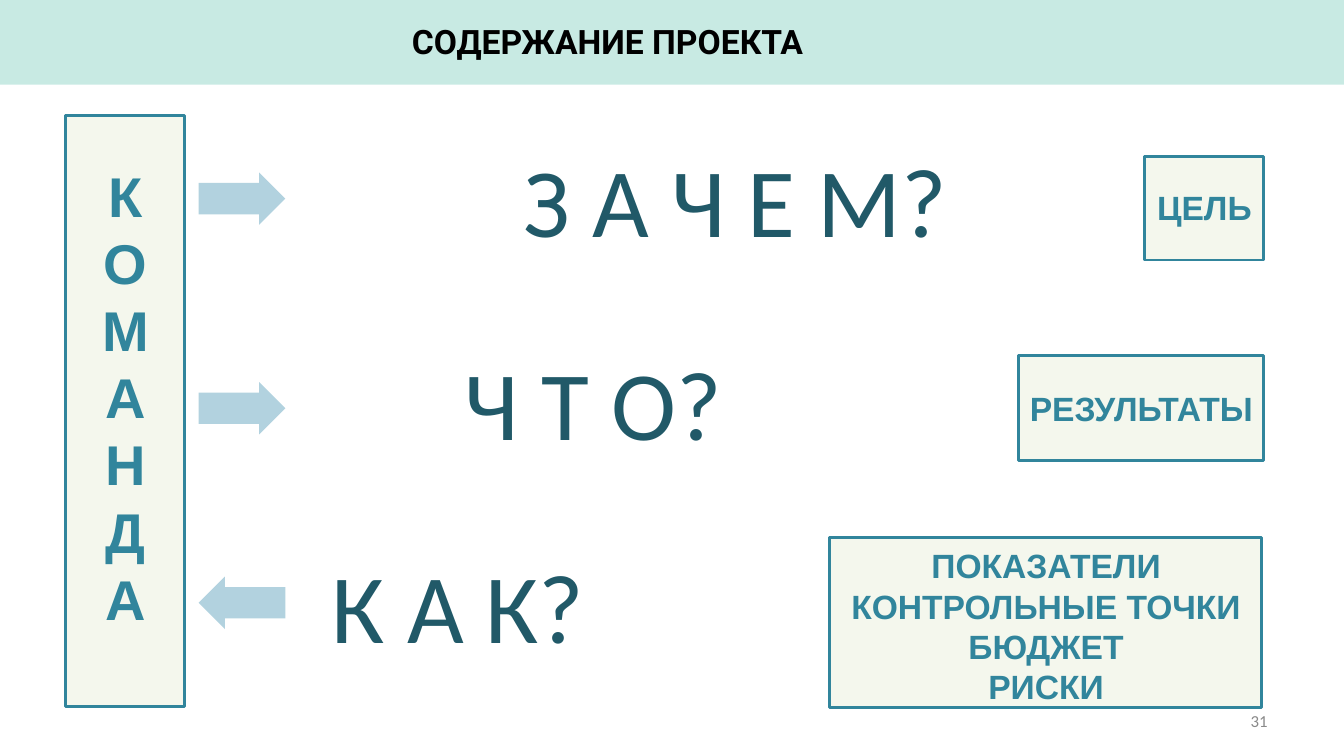
from pptx import Presentation
from pptx.dml.color import RGBColor
from pptx.enum.shapes import MSO_SHAPE
from pptx.enum.text import MSO_ANCHOR, PP_ALIGN
from pptx.oxml.ns import qn
from pptx.util import Inches, Pt
from lxml.etree import SubElement

TEAL, DARK_TEAL, CREAM, PALE_BLUE = "31859C", "215968", "F4F7ED", "B2D2DF"


def color(value):
    return RGBColor.from_string(value)


def add_block(page, kind, left, top, width, height, fill, outline=None):
    block = page.shapes.add_shape(
        kind, Inches(left), Inches(top), Inches(width), Inches(height))
    block.shadow.inherit = False
    block.fill.solid()
    block.fill.fore_color.rgb = color(fill)
    if outline:
        block.line.color.rgb = color(outline)
        block.line.width = Pt(2)
    else:
        block.line.fill.background()
    return block


def add_text(page, text, left, top, width, height, size=24, font="Arial",
             tint=TEAL, bold=False, align=PP_ALIGN.CENTER,
             anchor=MSO_ANCHOR.MIDDLE, inset=(0.1, 0.05), spacing=None):
    box = page.shapes.add_textbox(
        Inches(left), Inches(top), Inches(width), Inches(height))
    frame = box.text_frame
    frame.word_wrap = True
    frame.vertical_anchor = anchor
    frame.margin_left = frame.margin_right = Inches(inset[0])
    frame.margin_top = frame.margin_bottom = Inches(inset[1])
    for number, line in enumerate(text.split("\n")):
        para = frame.paragraphs[0] if number == 0 else frame.add_paragraph()
        para.alignment = align
        if spacing:
            para.line_spacing = spacing
        span = para.add_run()
        span.text = line
        span.font.size = Pt(size)
        span.font.name = font
        span.font.bold = bold
        span.font.color.rgb = color(tint)


def add_header(page, title, height):
    band = add_block(page, MSO_SHAPE.RECTANGLE, 0, 0, 13.33, height, "37B29A")
    # Translucent band
    tone = band.fill._xPr.find(qn("a:solidFill"))[0]
    SubElement(tone, qn("a:alpha"), val="27000")
    add_text(page, title, -0.51, 0.14, 13.07, 0.54, font="Roboto",
             tint="000000", bold=True, inset=(0.13, 0.07))


def add_panel(page, text, left, top, width, height, drop, size=24):
    """Outlined panel whose text starts `drop` inches below its top."""
    add_block(page, MSO_SHAPE.RECTANGLE, left, top, width, height, CREAM, TEAL)
    add_text(page, text, left, top + drop, width + 0.01, height - drop,
             size=size, bold=True, anchor=MSO_ANCHOR.TOP,
             spacing=Pt(size * 1.2))


def add_question(page, text, top, indent, align):
    add_text(page, text, 3 + indent, top, 8.59 - indent, 1.73, size=70,
             font="Calibri", tint=DARK_TEAL, align=align,
             inset=(0.29, 0.15), spacing=0.9)


def add_arrow(page, kind, top):
    arrow = add_block(page, kind, 1.97, top, 0.86, 0.52, PALE_BLUE)
    arrow.adjustments[0] = 0.6
    arrow.adjustments[1] = 0.5


def build_slide(page):
    add_header(page, "СОДЕРЖАНИЕ ПРОЕКТА", 0.84)

    # Questions, one per row
    questions = [("З А Ч Е М?", 0, PP_ALIGN.CENTER),
                 ("Ч Т О?", 1.32, PP_ALIGN.LEFT),
                 ("К А К?", 0, PP_ALIGN.LEFT)]
    for row, (text, indent, align) in enumerate(questions):
        add_question(page, text, 1.18 + row * 2.01, indent, align)

    # Answers on the right
    add_panel(page, "ЦЕЛЬ", 11.35, 1.55, 1.18, 1.03, 0.26)
    add_panel(page, "РЕЗУЛЬТАТЫ", 10.1, 3.53, 2.43, 1.04, 0.27)
    add_panel(page, "ПОКАЗАТЕЛИ\nКОНТРОЛЬНЫЕ ТОЧКИ\nБЮДЖЕТ\nРИСКИ",
              8.23, 5.33, 4.28, 1.69, 0.03)

    # Team column and its arrows
    add_panel(page, "\n".join("КОМАНДА"), 0.65, 1.15, 1.18, 5.86, 0.4, size=40)
    for kind, top in [(MSO_SHAPE.RIGHT_ARROW, 1.71),
                      (MSO_SHAPE.RIGHT_ARROW, 3.79),
                      (MSO_SHAPE.LEFT_ARROW, 5.72)]:
        add_arrow(page, kind, top)

    # Page number
    add_text(page, "31", 9.56, 6.95, 3.11, 0.4, size=12, font="Calibri",
             tint="898989", align=PP_ALIGN.RIGHT)


def main():
    deck = Presentation()
    deck.slide_width, deck.slide_height = Inches(13.33), Inches(7.5)
    build_slide(deck.slides.add_slide(deck.slide_layouts[6]))
    deck.save("out.pptx")


if __name__ == "__main__":
    main()
